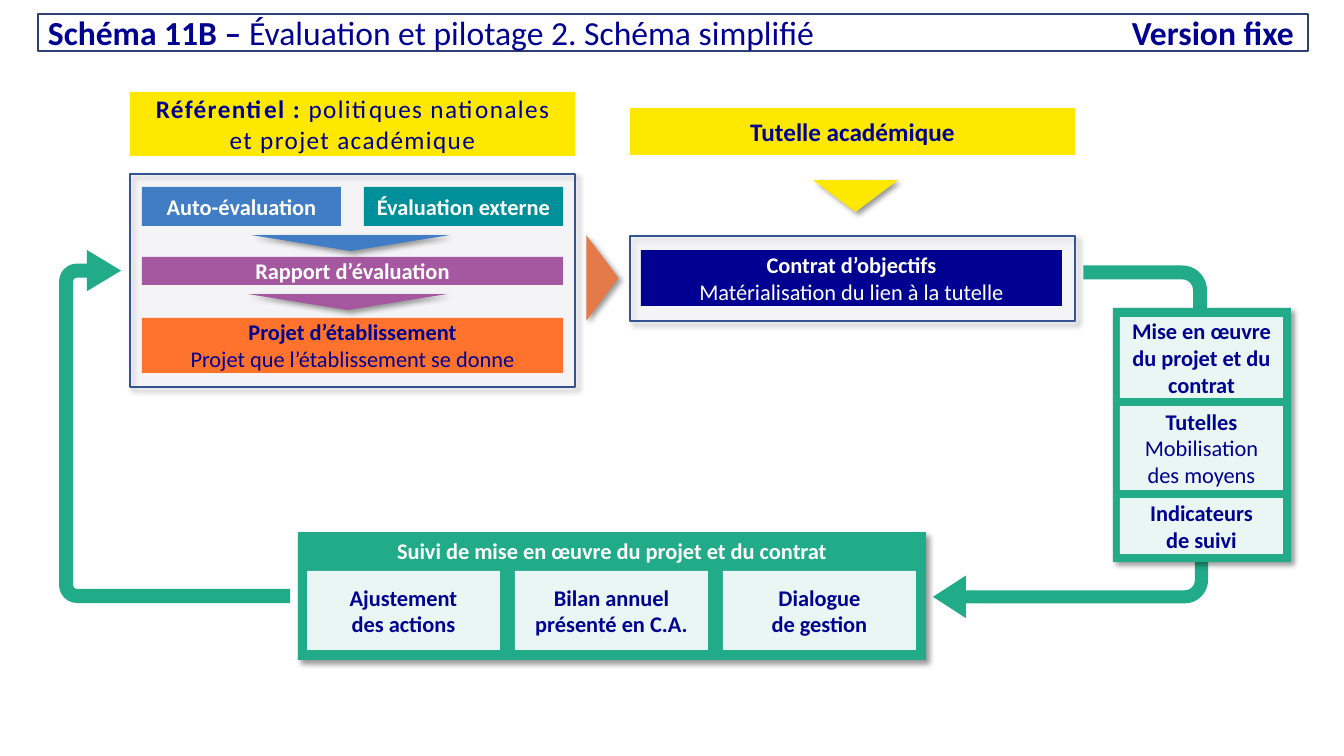
from lxml.etree import SubElement
from pptx import Presentation
from pptx.dml.color import RGBColor
from pptx.enum.shapes import MSO_SHAPE
from pptx.enum.text import MSO_ANCHOR, PP_ALIGN
from pptx.oxml.ns import qn
from pptx.util import Emu, Pt

EMU_PER_PX = 914400 / 100.8
FONT = "Calibri"

NAVY = RGBColor(0x00, 0x00, 0x91)
WHITE = RGBColor(0xFF, 0xFF, 0xFF)
YELLOW = RGBColor(0xFF, 0xE8, 0x00)
BLUE = RGBColor(0x41, 0x7D, 0xC4)
TEAL = RGBColor(0x00, 0x90, 0x99)
PURPLE = RGBColor(0xA5, 0x58, 0xA0)
ORANGE = RGBColor(0xFF, 0x73, 0x2C)
COPPER = RGBColor(0xE4, 0x79, 0x4A)
GREEN = RGBColor(0x21, 0xAB, 0x88)
LAVENDER = RGBColor(0xEF, 0xEF, 0xFF)
PANEL_LINE = RGBColor(0x32, 0x54, 0x91)
TITLE_LINE = RGBColor(0x2F, 0x40, 0x77)


def px(value):
    return Emu(round(value * EMU_PER_PX))


def add_shadow(sp):
    effects = sp._element.spPr.find(qn("a:effectLst"))
    shadow = SubElement(effects, qn("a:outerShdw"), blurRad=str(Pt(4)),
                        dist=str(Pt(3)), dir=str(45 * 60000), algn="tl", rotWithShape="0")
    color = SubElement(shadow, qn("a:srgbClr"), val="000000")
    SubElement(color, qn("a:alpha"), val="40000")


def add_block(s, x, y, w, h, fill=None, kind=MSO_SHAPE.RECTANGLE, alpha=None,
              line=None, shadow=False, rotation=0, adj=()):
    sp = s.shapes.add_shape(kind, px(x), px(y), px(w), px(h))
    sp.rotation = rotation
    for i, value in enumerate(adj):
        sp.adjustments[i] = value
    if fill is None:
        sp.fill.background()
    else:
        sp.fill.solid()
        sp.fill.fore_color.rgb = fill
    if alpha is not None:
        color = sp._element.spPr.find(qn("a:solidFill")).find(qn("a:srgbClr"))
        SubElement(color, qn("a:alpha"), val=str(alpha * 1000))
    if line is None:
        sp.line.fill.background()
    else:
        sp.line.color.rgb = line
        sp.line.width = Pt(1)
    sp.shadow.inherit = False
    if shadow:
        add_shadow(sp)
    return sp


def write(sp, *paragraphs, size=16, color=NAVY, align=PP_ALIGN.CENTER,
          anchor=MSO_ANCHOR.MIDDLE, spacing=None):
    """Each paragraph is a list of (text, bold) runs."""
    tf = sp.text_frame
    tf.word_wrap = True
    tf.vertical_anchor = anchor
    for i, runs in enumerate(paragraphs):
        p = tf.paragraphs[0] if i == 0 else tf.add_paragraph()
        p.alignment = align
        for text, bold in runs:
            r = p.add_run()
            r.text = text
            r.font.name = FONT
            r.font.size = Pt(size)
            r.font.bold = bold
            r.font.color.rgb = color
            if spacing is not None:
                r._r.get_or_add_rPr().set("spc", str(spacing * 100))
    return tf


def add_box(s, x, y, w, h, fill, *paragraphs, alpha=None, **text_format):
    return write(add_block(s, x, y, w, h, fill, alpha=alpha), *paragraphs, **text_format)


def add_panel(s, x, y, w, h):
    add_block(s, x, y, w, h, LAVENDER, alpha=10, line=PANEL_LINE, shadow=True)


def add_triangle(s, x, y, w, h, fill, rotation=180):
    add_block(s, x, y, w, h, fill, MSO_SHAPE.ISOSCELES_TRIANGLE, shadow=True, rotation=rotation)


def add_title(s):
    sp = add_block(s, 38, 14, 1270, 37, line=TITLE_LINE)
    tf = write(sp, [("Schéma 11B – ", True),
                    ("Évaluation et pilotage 2. Schéma simplifié\t", False),
                    ("Version fixe", True)], size=24, align=PP_ALIGN.LEFT)
    tabs = SubElement(tf.paragraphs[0]._p.get_or_add_pPr(), qn("a:tabLst"))
    SubElement(tabs, qn("a:tab"), pos=str(px(1246)), algn="r")


def add_evaluation(s):
    add_box(s, 130, 92, 445, 64, YELLOW,
            [("Référentiel : ", True), ("politiques nationales", False)],
            [("et projet académique", False)], size=18, spacing=1)
    add_panel(s, 130, 174, 445, 213)
    add_box(s, 142, 187, 199, 39, BLUE, [("Auto-évaluation", True)], color=WHITE)
    add_box(s, 364, 187, 199, 39, TEAL, [("Évaluation externe", True)], color=WHITE)
    add_triangle(s, 251, 235, 199, 16, BLUE)
    add_box(s, 142, 257, 421, 28, PURPLE, [("Rapport d’évaluation", True)], color=WHITE)
    add_triangle(s, 248, 294, 199, 16, PURPLE)
    add_box(s, 142, 318, 421, 55, ORANGE, [("Projet d’établissement", True)],
            [("Projet que l’établissement se donne", False)])


def add_contract(s):
    add_box(s, 630, 108, 445, 47, YELLOW, [("Tutelle académique", True)], size=18)
    add_triangle(s, 813, 180, 85, 32, YELLOW)
    add_triangle(s, 560, 262, 85, 32, COPPER, rotation=90)
    add_panel(s, 630, 236, 445, 85)
    add_box(s, 641, 250, 421, 56, NAVY, [("Contrat d’objectifs", True)],
            [("Matérialisation du lien à la tutelle", False)], color=WHITE)


def add_cycle_arrows(s):
    bend = (0.1, 0.162, 0.25, 0.178)
    uturn = (0.061, 0.089, 0.148, 0.078, 0.269)
    for x, y, w, h, kind, rotation, adj in (
            (933, 487, 275, 131, MSO_SHAPE.BENT_ARROW, 180, bend),
            (1067, 282, 172, 139, MSO_SHAPE.BENT_ARROW, 90, bend),
            (-2, 311, 353, 231, MSO_SHAPE.U_TURN_ARROW, 270, uturn)):
        add_block(s, x, y, w, h, GREEN, kind, rotation=rotation, adj=adj)


def add_implementation(s):
    add_block(s, 1113, 308, 178, 254, GREEN, shadow=True)
    y, gap = 317, 8
    for h, paragraphs in (
            (81, [[("Mise en œuvre du projet et du contrat", True)]]),
            (84, [[("Tutelles", True)], [("Mobilisation des moyens", False)]]),
            (56, [[("Indicateurs", True)], [("de suivi", True)]])):
        add_box(s, 1120, y, 163, h, WHITE, *paragraphs, alpha=90)
        y += h + gap


def add_follow_up(s):
    sp = add_block(s, 298, 532, 628, 128, GREEN, shadow=True)
    tf = write(sp, [("Suivi de mise en œuvre du projet et du contrat", True)],
               color=WHITE, anchor=MSO_ANCHOR.TOP)
    tf.margin_left = tf.margin_right = px(4)
    for i, lines in enumerate((("Ajustement", "des actions"),
                               ("Bilan annuel", "présenté en C.A."),
                               ("Dialogue", "de gestion"))):
        add_box(s, 307 + 208 * i, 571, 193, 79, WHITE,
                *[[(line, True)] for line in lines], alpha=90)


def main():
    prs = Presentation()
    prs.slide_width, prs.slide_height = px(1344), px(756)
    s = prs.slides.add_slide(prs.slide_layouts[6])

    # Title bar
    add_title(s)
    # Upper row: evaluation leads to the contract
    add_evaluation(s)
    add_contract(s)
    # Cycle: arrows, then the green groups over their ends
    add_cycle_arrows(s)
    add_implementation(s)
    add_follow_up(s)

    prs.save("out.pptx")


if __name__ == "__main__":
    main()
